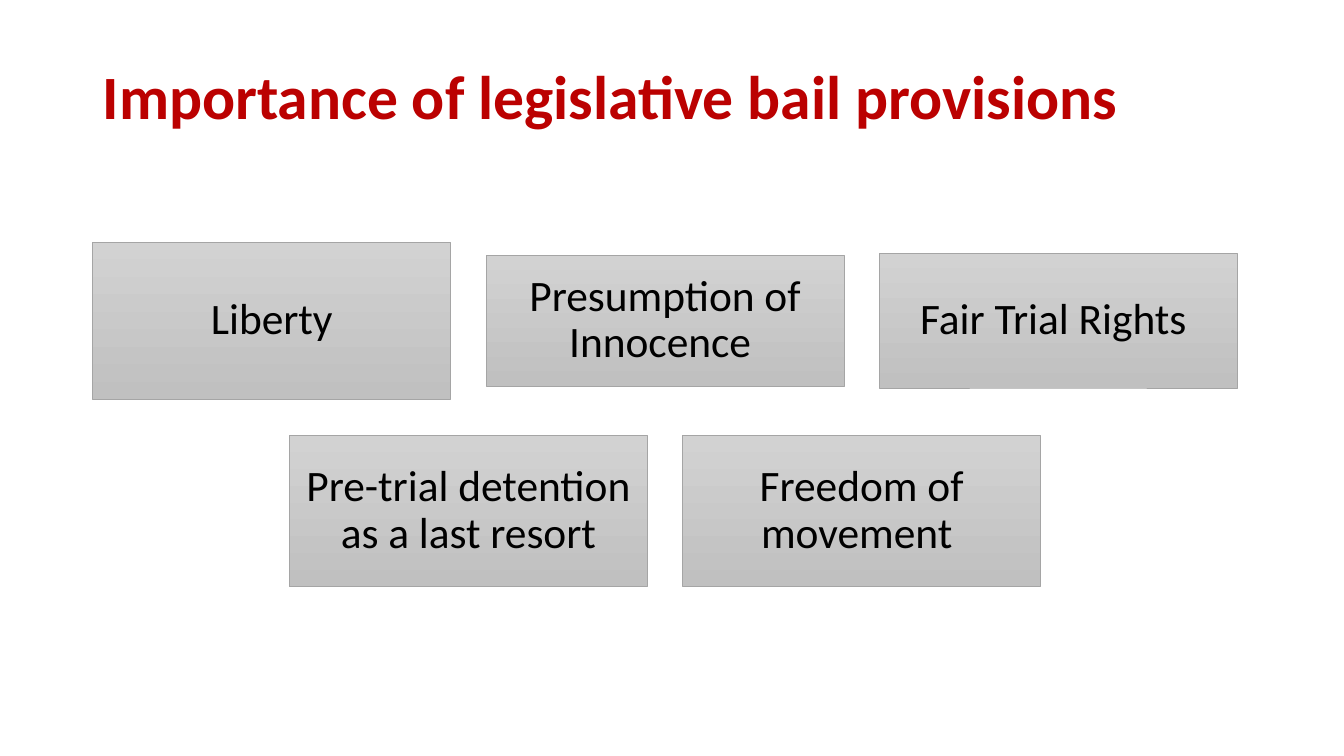
from pptx import Presentation
from pptx.dml.color import RGBColor
from pptx.enum.shapes import MSO_SHAPE
from pptx.enum.text import MSO_ANCHOR, PP_ALIGN
from pptx.util import Inches, Pt

COLORS = {"title": "BB0101", "text": "000000", "top": "D2D2D2",
          "bottom": "C0C0C0", "border": "A5A5A5"}
LEFT, PITCH, BOX_W, INSET = 0.92, 3.9, 3.55, 0.13
ROWS = [
    (0, 3.18, [("Liberty", 1.56), ("Presumption of Innocence ", 1.3),
               ("Fair Trial Rights ", 1.34)]),
    (0.5, 5.07, [("Pre-trial detention as a last resort", 1.5),
                 ("Freedom of movement ", 1.5)]),
]


def rgb(name):
    """Return the named colour."""
    return RGBColor.from_string(COLORS[name])


def set_text(tf, text, size, color, align, bold=False):
    """Write one vertically centred paragraph into a text frame."""
    tf.text = text
    tf.word_wrap = True
    tf.vertical_anchor = MSO_ANCHOR.MIDDLE
    p = tf.paragraphs[0]
    p.alignment = align
    p.line_spacing = 0.9
    font = p.runs[0].font
    font.name, font.size, font.bold = "Calibri", Pt(size), bold
    font.color.rgb = rgb(color)


def add_title(s, text):
    """Add the slide heading."""
    sp = s.shapes.add_textbox(Inches(LEFT), Inches(0.4), Inches(11.5), Inches(1.17))
    set_text(sp.text_frame, text, 44, "title", PP_ALIGN.LEFT, bold=True)


def add_box(s, col, middle, text, height):
    """Add a shaded box at a grid column, centred on its row."""
    sp = s.shapes.add_shape(
        MSO_SHAPE.RECTANGLE, Inches(LEFT + col * PITCH),
        Inches(middle - height / 2), Inches(BOX_W), Inches(height))
    sp.shadow.inherit = False
    sp.fill.gradient()
    sp.fill.gradient_angle = 270
    for stop, name in zip(sp.fill.gradient_stops, ("top", "bottom")):
        stop.color.rgb = rgb(name)
    sp.line.color.rgb = rgb("border")
    sp.line.width = Pt(0.5)
    tf = sp.text_frame
    tf.margin_left = tf.margin_right = Inches(INSET)
    tf.margin_top = tf.margin_bottom = Inches(INSET)
    set_text(tf, text, 31, "text", PP_ALIGN.CENTER)


def main():
    """Build and save the slide."""
    prs = Presentation()
    prs.slide_width, prs.slide_height = Inches(13.33), Inches(7.5)
    s = prs.slides.add_slide(prs.slide_layouts[6])
    add_title(s, "Importance of legislative bail provisions")
    for first_col, middle, boxes in ROWS:
        for i, (text, height) in enumerate(boxes):
            add_box(s, first_col + i, middle, text, height)
    prs.save("out.pptx")


if __name__ == "__main__":
    main()
